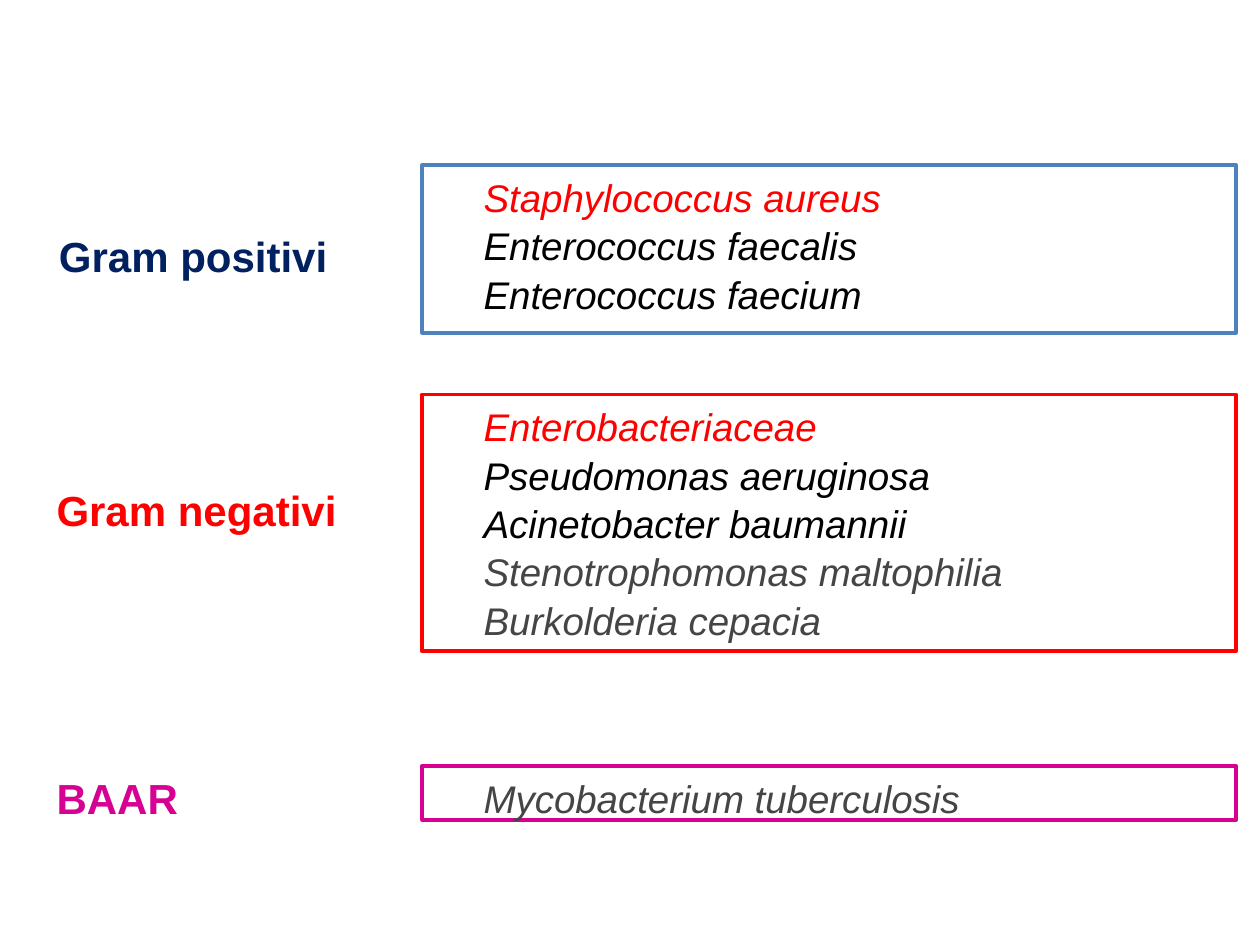
from dataclasses import dataclass

from pptx import Presentation
from pptx.dml.color import RGBColor
from pptx.enum.shapes import MSO_SHAPE as Shape
from pptx.enum.text import MSO_ANCHOR as Anchor, PP_ALIGN as Align
from pptx.util import Cm, Pt


@dataclass(frozen=True)
class Theme:
    font: str = "Arial"
    label_size: int = 24
    species_size: int = 22
    line_spacing: float = 1.05
    border: int = 2
    navy: str = "002060"
    blue: str = "4F81BD"
    red: str = "FF0000"
    magenta: str = "D60093"
    black: str = "000000"
    gray: str = "444547"


@dataclass(frozen=True)
class Box:
    left: float
    top: float
    width: float
    height: float

    def lengths(self):
        return [Cm(value) for value in (self.left, self.top, self.width, self.height)]


THEME = Theme()
LABEL_HEIGHT = 1.27
FRAME_OFFSET = 7.62
GROUPS = [
    (
        Box(0.89, 3.33, 24.03, 3.38),
        ("Gram positivi", THEME.navy, Box(0.05, 1.19, 5.97, LABEL_HEIGHT)),
        THEME.blue,
        [
            ("Staphylococcus aureus", THEME.red),
            ("Enterococcus faecalis", THEME.black),
            ("Enterococcus faecium", THEME.black),
        ],
    ),
    (
        Box(0.89, 7.95, 24.03, 5.18),
        ("Gram negativi", THEME.red, Box(0, 1.7, 6.22, LABEL_HEIGHT)),
        THEME.red,
        [
            ("Enterobacteriaceae", THEME.red),
            ("Pseudomonas aeruginosa", THEME.black),
            ("Acinetobacter baumannii", THEME.black),
            ("Stenotrophomonas maltophilia", THEME.gray),
            ("Burkolderia cepacia", THEME.gray),
        ],
    ),
    (
        Box(0.89, 15.44, 24.03, 1.09),
        ("BAAR", THEME.magenta, Box(0, 0, 3, LABEL_HEIGHT)),
        THEME.magenta,
        [("Mycobacterium tuberculosis", THEME.gray)],
    ),
]


def add_span(para, text, size, color, bold=False, italic=False):
    span = para.add_run()
    span.text = text
    font = span.font
    font.name = THEME.font
    font.size = Pt(size)
    font.bold = bold
    font.italic = italic
    font.color.rgb = RGBColor.from_string(color)


def add_label(page, box, text, color):
    frame = page.shapes.add_textbox(*box.lengths()).text_frame
    frame.word_wrap = False
    add_span(frame.paragraphs[0], text, THEME.label_size, color, bold=True)


def add_species(page, box, border_color, species):
    shape = page.shapes.add_shape(Shape.RECTANGLE, *box.lengths())
    shape.shadow.inherit = False
    shape.fill.background()
    shape.line.color.rgb = RGBColor.from_string(border_color)
    shape.line.width = Pt(THEME.border)
    frame = shape.text_frame
    frame.word_wrap = True
    frame.vertical_anchor = Anchor.TOP
    frame.margin_left = Cm(1.24)
    frame.margin_top = Cm(0.13)
    frame.margin_bottom = 0
    for index, (name, color) in enumerate(species):
        para = frame.add_paragraph() if index else frame.paragraphs[0]
        para.alignment = Align.LEFT
        para.line_spacing = THEME.line_spacing
        add_span(para, name, THEME.species_size, color, italic=True)


def add_group(page, box, label, border_color, species):
    text, color, place = label
    label_box = Box(box.left + place.left, box.top + place.top, place.width, place.height)
    add_label(page, label_box, text, color)
    species_box = Box(box.left + FRAME_OFFSET, box.top, box.width - FRAME_OFFSET, box.height)
    add_species(page, species_box, border_color, species)


def main():
    deck = Presentation()
    deck.slide_width = Cm(25.4)
    deck.slide_height = Cm(19.05)
    page = deck.slides.add_slide(deck.slide_layouts[6])
    for group in GROUPS:
        add_group(page, *group)
    deck.save("out.pptx")


if __name__ == "__main__":
    main()
